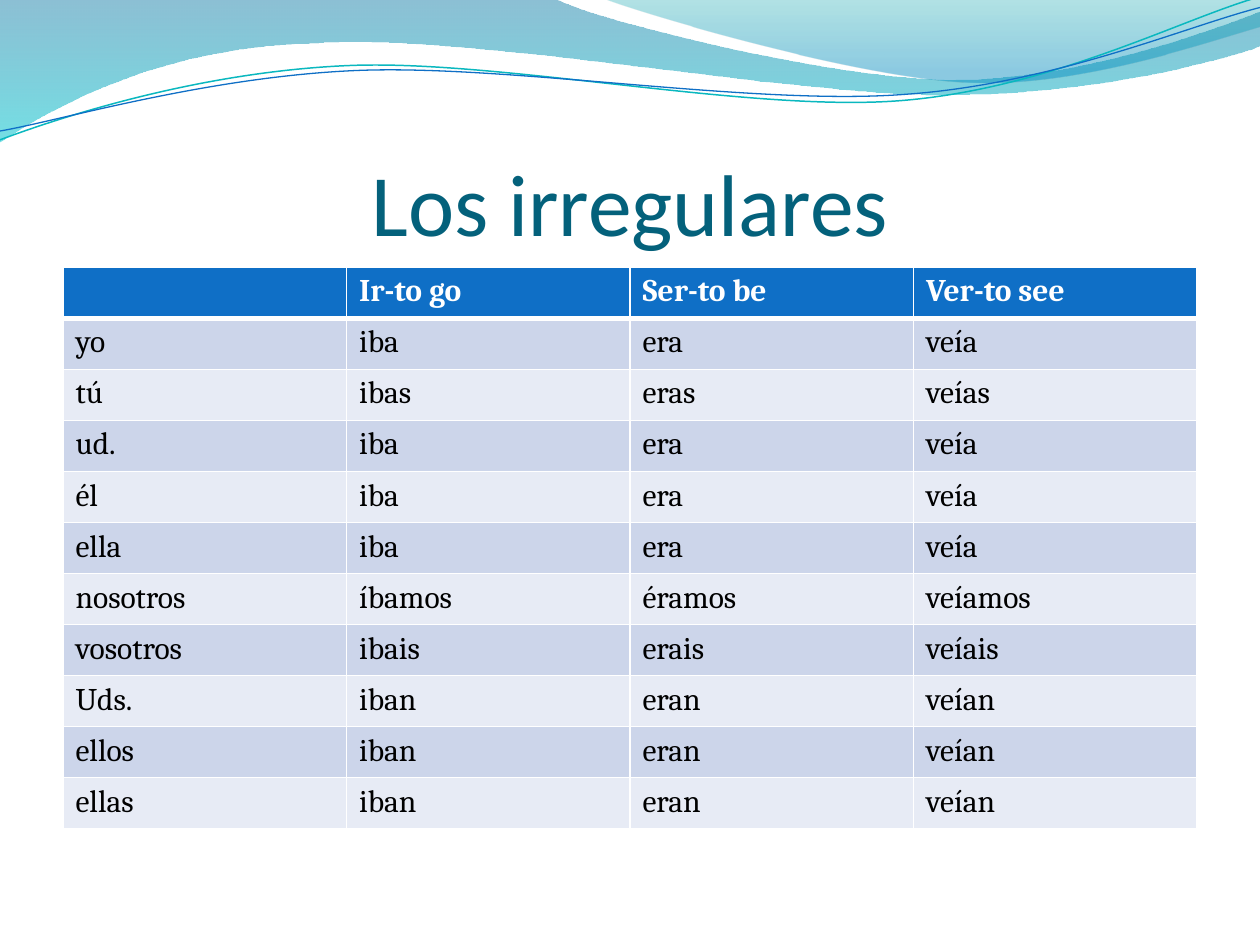
import math

import lxml.etree
import pptx
import pptx.dml.color
import pptx.enum.text
import pptx.oxml.ns
import pptx.util

Inches = pptx.util.Inches
Pt = pptx.util.Pt
RGBColor = pptx.dml.color.RGBColor
qn = pptx.oxml.ns.qn

# Content
TITLE = "Los irregulares"
CONJUGATIONS = [
    ("", "Ir-to go", "Ser-to be", "Ver-to see"),
    ("yo", "iba", "era", "veía"),
    ("tú", "ibas", "eras", "veías"),
    ("ud.", "iba", "era", "veía"),
    ("él", "iba", "era", "veía"),
    ("ella", "iba", "era", "veía"),
    ("nosotros", "íbamos", "éramos", "veíamos"),
    ("vosotros", "ibais", "erais", "veíais"),
    ("Uds.", "iban", "eran", "veían"),
    ("ellos", "iban", "eran", "veían"),
    ("ellas", "iban", "eran", "veían"),
]

# Colours
WHITE = RGBColor(0xFF, 0xFF, 0xFF)
BLACK = RGBColor(0, 0, 0)
TITLE_TEAL = RGBColor(0x04, 0x61, 0x7B)
BLUE = RGBColor(0x0F, 0x6F, 0xC6)
BAND_DARK = RGBColor(0xCC, 0xD5, 0xEA)
BAND_LIGHT = RGBColor(0xE7, 0xEB, 0xF5)
LINE_TEAL = RGBColor(0x0A, 0xB8, 0xBF)
WAVE_BLUE = RGBColor(0x00, 0x74, 0xA1)
WAVE_CYAN = RGBColor(0x00, 0xC6, 0xCF)
CREST_TEAL = RGBColor(0x00, 0xA1, 0xA9)
CREST_BLUE = RGBColor(0x00, 0x8B, 0xBF)

# Outlines in inches: a start point, then lines (x, y) or cubic curves (two controls and an end)
# Gradient stops: position, colour, opacity in percent
WAVES = [
    {
        "outline": [
            (0, 0), (4.4, -0.01),
            (4.76, 0.17, 6.64, 0.63, 7.58, 0.63), (8.53, 0.63, 9.58, 0.26, 10, 0.09),
            (10.01, 0.36),
            (9.83, 0.44, 8.7, 0.76, 7.46, 0.75), (6.22, 0.75, 3.82, 0.28, 2.57, 0.34),
            (1.29, 0.36, 0.46, 0.83, -0.01, 1.13), (0, 0),
        ],
        "stops": [(0, WAVE_BLUE, 45), (1, WAVE_CYAN, 55)],
    },
    {
        "outline": [
            (4.79, -0.01),
            (5.09, 0.11, 6.82, 0.62, 7.69, 0.65), (8.56, 0.69, 9.61, 0.32, 10, 0.21),
            (10, 0), (4.79, -0.01),
        ],
        "stops": [(0, CREST_TEAL, 30), (0.8, CREST_BLUE, 45)],
    },
]
WAVE_LINES = [
    {
        "outline": [
            (0, 1.11),
            (0.48, 0.93, 1.58, 0.57, 2.77, 0.52), (3.95, 0.47, 5.93, 0.89, 7.13, 0.8),
            (8.33, 0.71, 9.38, 0.15, 9.98, -0.02),
        ],
        "center": (4.99, 0.57), "color": LINE_TEAL, "width": 0.85,
    },
    {
        "outline": [
            (0, 1.04),
            (0.47, 0.96, 1.64, 0.61, 2.83, 0.56), (4.03, 0.51, 5.97, 0.84, 7.17, 0.75),
            (8.36, 0.67, 9.41, 0.21, 10, 0.06),
        ],
        "center": (5, 0.59), "color": BLUE, "width": 0.75,
    },
]
LINE_TILT = -2.7  # degrees


def segment_points(segment):
    return list(zip(segment[::2], segment[1::2]))


def turn_back(segment, center):
    """Undo the tilt, which the shape's own rotation applies again."""
    cosine, sine = math.cos(math.radians(-LINE_TILT)), math.sin(math.radians(-LINE_TILT))
    turned = []
    for x, y in segment_points(segment):
        across, down = x - center[0], y - center[1]
        turned += [center[0] + across * cosine - down * sine,
                   center[1] + across * sine + down * cosine]
    return tuple(turned)


def add_outline(slide, outline, close):
    points = [
        (Inches(x), Inches(y)) for segment in outline for x, y in segment_points(segment)
    ]
    builder = slide.shapes.build_freeform(*points[0])
    builder.add_line_segments(points[1:], close=close)
    shape = builder.convert_to_shape()
    shape.shadow.inherit = False

    # Join each three points of a curved segment into one cubic curve
    lines = iter(list(shape.element.spPr.iter(qn("a:lnTo"))))
    for segment in outline[1:]:
        first = next(lines)
        if len(segment) == 6:
            first.tag = qn("a:cubicBezTo")
            for line in (next(lines), next(lines)):
                first.append(line[0])
                line.getparent().remove(line)
    return shape


def add_wave(slide, wave):
    shape = add_outline(slide, wave["outline"], close=True)
    shape.line.fill.background()
    shape.fill.gradient()
    shape.fill.gradient_angle = 270  # top to bottom
    for stop, (position, color, _) in zip(shape.fill.gradient_stops, wave["stops"]):
        stop.position = position
        stop.color.rgb = color
    color_elements = list(shape.element.spPr.iter(qn("a:srgbClr")))
    for element, (_, _, opacity) in zip(color_elements, wave["stops"]):
        lxml.etree.SubElement(element, qn("a:alpha"), val=str(opacity * 1000))


def add_wave_line(slide, wave_line):
    outline = [turn_back(segment, wave_line["center"]) for segment in wave_line["outline"]]
    shape = add_outline(slide, outline, close=False)
    shape.rotation = LINE_TILT
    shape.fill.background()
    shape.line.color.rgb = wave_line["color"]
    shape.line.width = Pt(wave_line["width"])


def set_borders(cell, widths):
    """Draw white borders; widths are points for left, right, top, bottom."""
    properties = cell._tc.get_or_add_tcPr()
    for index, (side, width) in enumerate(zip("LRTB", widths)):
        border = lxml.etree.Element(qn(f"a:ln{side}"), w=str(Pt(width)))
        fill = lxml.etree.SubElement(border, qn("a:solidFill"))
        lxml.etree.SubElement(fill, qn("a:srgbClr"), val=str(WHITE))
        properties.insert(index, border)


def add_title(slide):
    title = slide.shapes.title
    title.left, title.top = Inches(0.5), Inches(0.77)
    title.width, title.height = Inches(9), Inches(1.25)
    frame = title.text_frame
    frame.text = TITLE
    frame.word_wrap = True
    frame.auto_size = pptx.enum.text.MSO_AUTO_SIZE.NONE
    frame.vertical_anchor = pptx.enum.text.MSO_ANCHOR.BOTTOM
    frame.margin_left = frame.margin_right = frame.margin_bottom = 0
    frame.margin_top = Inches(0.05)
    paragraph = frame.paragraphs[0]
    paragraph.alignment = pptx.enum.text.PP_ALIGN.CENTER
    font = paragraph.runs[0].font
    font.name, font.size, font.color.rgb = "Calibri", Pt(50), TITLE_TEAL


def add_conjugation_table(slide):
    table = slide.shapes.add_table(
        len(CONJUGATIONS), len(CONJUGATIONS[0]),
        Inches(0.5), Inches(2.12), Inches(9), Inches(4.46),
    ).table
    for row, words in enumerate(CONJUGATIONS):
        header = row == 0
        band = BLUE if header else (BAND_LIGHT, BAND_DARK)[row % 2]
        for column, word in enumerate(words):
            cell = table.cell(row, column)
            cell.text = word
            cell.fill.solid()
            cell.fill.fore_color.rgb = band
            set_borders(cell, (1, 1, 3 if row == 1 else 1, 3 if header else 1))
            for run in cell.text_frame.paragraphs[0].runs:
                font = run.font
                font.name, font.size, font.bold = "Cambria", Pt(18), header
                font.color.rgb = WHITE if header else BLACK


def main():
    presentation = pptx.Presentation()
    presentation.slide_width, presentation.slide_height = Inches(10), Inches(7.5)
    slide = presentation.slides.add_slide(presentation.slide_layouts[5])

    # Wave decoration along the top
    for wave in WAVES:
        add_wave(slide, wave)
    for wave_line in WAVE_LINES:
        add_wave_line(slide, wave_line)

    # Title and verb table
    add_title(slide)
    add_conjugation_table(slide)
    presentation.save("out.pptx")


if __name__ == "__main__":
    main()
